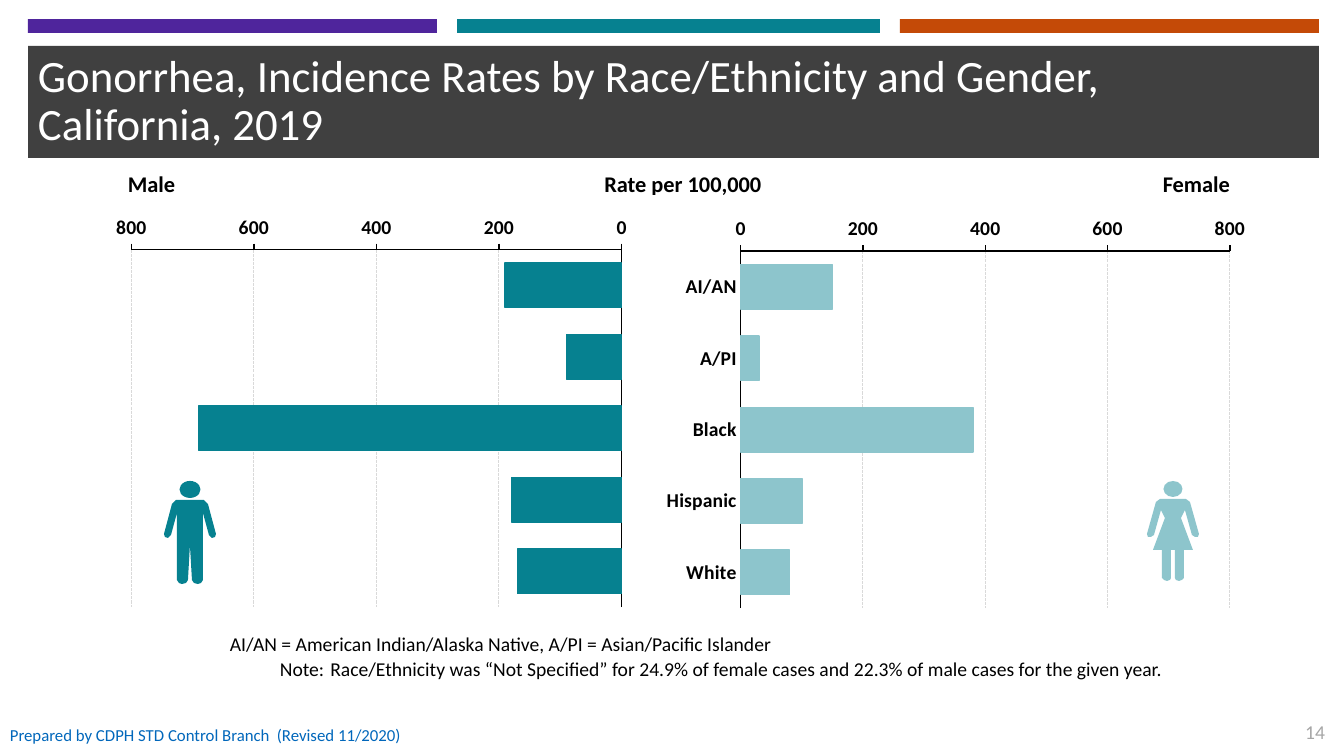
from lxml import etree
from pptx import Presentation
from pptx.chart.data import CategoryChartData
from pptx.dml.color import RGBColor
from pptx.enum.chart import XL_CHART_TYPE as CHART, XL_TICK_LABEL_POSITION as LABELS, XL_TICK_MARK as TICK
from pptx.enum.dml import MSO_LINE
from pptx.enum.shapes import MSO_SHAPE as SHAPE
from pptx.enum.text import MSO_ANCHOR as ANCHOR, PP_ALIGN as ALIGN
from pptx.oxml import parse_xml
from pptx.oxml.ns import nsdecls, qn
from pptx.util import Emu, Pt

EMU_PER_PX = 914400 / 100.8
COLORS = {
    "white": "FFFFFF", "black": "000000", "banner": "404040", "purple": "4F259C",
    "teal": "068190", "orange": "C44A07", "pale_teal": "8DC5CC",
    "grid": "D9D9D9", "number": "A6A6A6", "footer": "0167BB",
}
RACES = ["AI/AN", "A/PI", "Black", "Hispanic", "White"]
# Right half of each body: offsets from the centre line and the shoulders.
MAN = [(14, 0), (18, 4), (26, 34), (25, 37), (22, 38), (19, 35), (13, 13), (13, 80),
       (11, 83), (8, 84), (4, 83), (2, 80), (0, 45)]
WOMAN = [(13, 0), (17, 3), (26, 35), (25, 38), (22, 38), (19, 36), (12, 11), (8, 19),
         (20, 51), (11, 51), (11, 79), (9, 81), (6, 82), (3, 81), (2, 79), (2, 51)]


def px(n):
    return Emu(round(n * EMU_PER_PX))


def rgb(name):
    return RGBColor.from_string(COLORS[name])


class SlideBuilder:
    def __init__(self, slide, font="Calibri", chart_font="Times New Roman"):
        self.shapes = slide.shapes
        self.font = font
        self.chart_font = chart_font

    def paint(self, sp, color):
        sp.shadow.inherit = False
        sp.fill.solid()
        sp.fill.fore_color.rgb = rgb(color)
        sp.line.fill.background()

    def style_font(self, font, size, color, bold=False, name=None):
        font.name = name or self.font
        font.size = Pt(size)
        font.bold = bold
        font.color.rgb = rgb(color)

    def shape(self, kind, box, color):
        sp = self.shapes.add_shape(kind, *map(px, box))
        self.paint(sp, color)

    def text(self, box, text, size, color, bold=False, align=ALIGN.LEFT,
             anchor=ANCHOR.TOP, wrap=True, spacing=None, after=None):
        tf = self.shapes.add_textbox(*map(px, box)).text_frame
        tf.word_wrap = wrap
        tf.vertical_anchor = anchor
        tf.text = text
        for p in tf.paragraphs:
            p.alignment = align
            if spacing:
                p.line_spacing = spacing
            if after:
                p.space_after = Pt(after)
            for r in p.runs:
                self.style_font(r.font, size, color, bold)
        return tf.paragraphs

    def tabs(self, p, stops, hanging=0):
        """Set tab stops as (position, alignment) and a hanging indent."""
        pPr = p._p.get_or_add_pPr()
        if hanging:
            pPr.set("marL", str(px(hanging)))
            pPr.set("indent", str(-px(hanging)))
        tab_list = etree.SubElement(pPr, qn("a:tabLst"))
        for pos, align in stops:
            etree.SubElement(tab_list, qn("a:tab"), pos=str(px(pos)), algn=align)

    def person(self, center, shoulders, half_body, head, color):
        """Draw a body mirrored about its centre line, with an oval head."""
        outline = half_body + [(-x, y) for x, y in reversed(half_body)]
        points = [(px(center + x), px(shoulders + y)) for x, y in outline]
        builder = self.shapes.build_freeform(*points[0])
        builder.add_line_segments(points[1:], close=True)
        self.paint(builder.convert_to_shape(), color)
        width, height = head
        self.shape(SHAPE.OVAL, (center - width / 2, 481, width, height), color)

    def axis_style(self, axis, tick):
        axis.major_tick_mark = tick
        axis.minor_tick_mark = TICK.NONE
        axis.format.line.color.rgb = rgb("black")
        axis.format.line.width = Pt(1)
        self.style_font(axis.tick_labels.font, 14, "black", bold=True)

    def bar_chart(self, box, name, rates, color, plot_box, mirrored=False):
        data = CategoryChartData()
        data.categories = RACES
        data.add_series(name, rates)
        chart = self.shapes.add_chart(CHART.BAR_CLUSTERED, *map(px, box), data).chart
        chart.has_title = chart.has_legend = False
        self.style_font(chart.font, 18, "black", True, self.chart_font)

        races = chart.category_axis
        races.reverse_order = True
        races.has_major_gridlines = False
        self.axis_style(races, TICK.NONE)
        if mirrored:
            races.tick_label_position = LABELS.NONE

        scale = chart.value_axis
        scale.minimum_scale, scale.maximum_scale, scale.major_unit = 0, 800, 200
        scale.reverse_order = mirrored
        self.axis_style(scale, TICK.OUTSIDE)
        scale.tick_labels.number_format = "#,##0"
        scale.tick_labels.number_format_is_linked = False
        grid = scale.major_gridlines.format.line
        grid.color.rgb = rgb("grid")
        grid.width = Pt(0.75)
        grid.dash_style = MSO_LINE.SQUARE_DOT

        plot = chart.plots[0]
        plot.gap_width = 60
        plot.vary_by_categories = False
        bars = plot.series[0]
        bars.invert_if_negative = False
        bars.format.fill.solid()
        bars.format.fill.fore_color.rgb = rgb(color)
        bars.format.line.color.rgb = rgb(color)
        bars.format.line.width = Pt(1)
        self.chart_frame(chart, plot_box)

    def chart_frame(self, chart, plot_box):
        """Place the inner plot area and make both backgrounds white."""
        def background():
            return parse_xml(
                f'<c:spPr {nsdecls("c", "a")}><a:solidFill><a:srgbClr val="{COLORS["white"]}"/>'
                '</a:solidFill><a:ln><a:noFill/></a:ln></c:spPr>')

        root = chart._chartSpace.find(qn("c:chart"))
        area = root.find(qn("c:plotArea"))
        for old in area.findall(qn("c:layout")):
            area.remove(old)
        settings = [("layoutTarget", "inner"), ("xMode", "edge"), ("yMode", "edge")]
        settings += zip("xywh", plot_box)
        layout = etree.Element(qn("c:layout"))
        manual = etree.SubElement(layout, qn("c:manualLayout"))
        for tag, value in settings:
            etree.SubElement(manual, qn(f"c:{tag}"), val=str(value))
        area.insert(0, layout)
        area.append(background())
        root.addnext(background())


def main():
    prs = Presentation()
    prs.slide_width, prs.slide_height = px(1344), px(756)
    s = SlideBuilder(prs.slides.add_slide(prs.slide_layouts[6]))

    banner = (28, 46, 1291, 112)
    s.shape(SHAPE.RECTANGLE, banner, "banner")
    for left, width, color in [(28, 409, "purple"), (457, 423, "teal"), (900, 419, "orange")]:
        s.shape(SHAPE.RECTANGLE, (left, 19, width, 14), color)
    s.text(banner, "Gonorrhea, Incidence Rates by Race/Ethnicity and Gender,\vCalifornia, 2019",
           32, "white", anchor=ANCHOR.MIDDLE, spacing=0.9)

    header = s.text((118, 165, 1137, 37), "Male\tRate per 100,000\tFemale", 16, "black", bold=True)
    s.tabs(header[0], [(555, "ctr"), (1102, "r")])

    s.bar_chart((72, 195, 606, 421), "Male", [190, 90, 690, 180, 170], "teal",
                (0.098, 0.13, 0.809, 0.849), mirrored=True)
    s.bar_chart((628, 196, 655, 421), "Female", [150, 30, 380, 100, 80], "pale_teal",
                (0.172, 0.131, 0.747, 0.848))
    s.person(190, 500, MAN, (21, 17), "teal")
    s.person(1173, 499, WOMAN, (19, 16), "pale_teal")

    legend, note = s.text(
        (188, 627, 1011, 59),
        "\tAI/AN = American Indian/Alaska Native, A/PI = Asian/Pacific Islander\n"
        "\tNote:\tRace/Ethnicity was “Not Specified” for 24.9% of female cases "
        "and 22.3% of male cases for the given year.", 14, "black", after=1)
    s.tabs(legend, [(32, "l")])
    s.tabs(note, [(70, "r"), (82, "l")], hanging=82)

    s.text((0, 715, 282, 40), "Prepared by CDPH STD Control Branch", 12, "footer",
           anchor=ANCHOR.MIDDLE)
    s.text((267, 715, 151, 40), "(Revised 11/2020)", 12, "footer", anchor=ANCHOR.MIDDLE)
    s.text((1292, 715, 43, 34), "14", 14, "number", align=ALIGN.RIGHT, wrap=False)
    prs.save("out.pptx")


if __name__ == "__main__":
    main()
